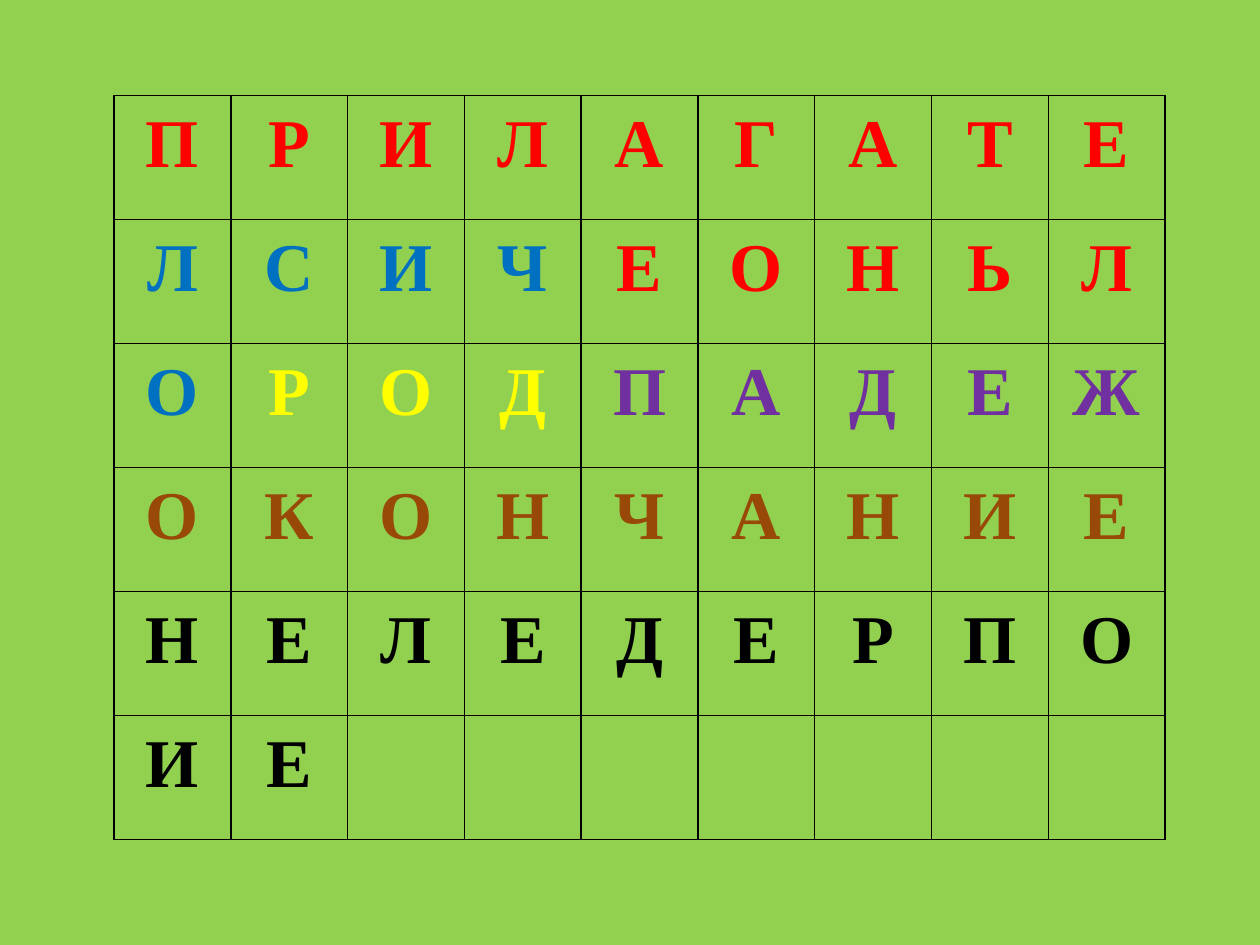
from lxml import etree
from pptx import Presentation
from pptx import util as u
from pptx.dml.color import RGBColor
from pptx.enum import text
from pptx.oxml import ns

INKS = {"R": "FF0000", "B": "0070C0", "Y": "FFFF00",
        "P": "7030A0", "N": "984807", "K": "000000"}
# Letters of each row, with the ink of each letter
ROWS = [
    ("ПРИЛАГАТЕ", "RRRRRRRRR"),
    ("ЛСИЧЕОНЬЛ", "BBBBRRRRR"),
    ("ОРОДПАДЕЖ", "BYYYPPPPP"),
    ("ОКОНЧАНИЕ", "NNNNNNNNN"),
    ("НЕЛЕДЕРПО", "KKKKKKKKK"),
    ("ИЕ", "KK"),
]
COLS = 9
LEFT, TOP = 65.2, 54.6
WIDE, HIGH = 66.75, 70.85


def paint(item, ink):
    """Give a fill a solid colour."""
    item.solid()
    item.fore_color.rgb = RGBColor.from_string(ink)


def frame(cell, ink):
    """Draw a thin line on all four sides of a cell."""
    props = cell._tc.get_or_add_tcPr()
    for side in ("lnL", "lnR", "lnT", "lnB"):
        line = etree.SubElement(props, ns.qn("a:" + side), w=str(u.Pt(1)))
        fill = etree.SubElement(line, ns.qn("a:solidFill"))
        etree.SubElement(fill, ns.qn("a:srgbClr"), val=ink)


def write(cell, letter, ink):
    para = cell.text_frame.paragraphs[0]
    para.alignment = text.PP_ALIGN.CENTER
    para.line_spacing = 1.15
    run = para.add_run()
    run.text = letter
    font = run.font
    font.name = "Times New Roman"
    font.size = u.Pt(39)
    font.bold = True
    paint(font.fill, ink)


def add_grid(slide):
    """Add the empty, bordered letter grid."""
    grid = slide.shapes.add_table(
        len(ROWS), COLS, u.Pt(LEFT), u.Pt(TOP),
        u.Pt(COLS * WIDE), u.Pt(len(ROWS) * HIGH)).table
    grid.first_row = grid.horz_banding = False
    for col in grid.columns:
        col.width = u.Pt(WIDE)
    for row in grid.rows:
        row.height = u.Pt(HIGH)
    for cell in grid.iter_cells():
        cell.margin_left = cell.margin_right = u.Pt(3)
        cell.margin_top = cell.margin_bottom = 0
        frame(cell, "000000")
        cell.fill.background()
    return grid


def main():
    deck = Presentation()
    deck.slide_width, deck.slide_height = u.Pt(720), u.Pt(540)
    slide = deck.slides.add_slide(deck.slide_layouts[6])
    paint(slide.background.fill, "92D050")
    grid = add_grid(slide)
    for r, (word, inks) in enumerate(ROWS):
        for c, (letter, ink) in enumerate(zip(word, inks)):
            write(grid.cell(r, c), letter, INKS[ink])
    deck.save("out.pptx")


if __name__ == "__main__":
    main()
